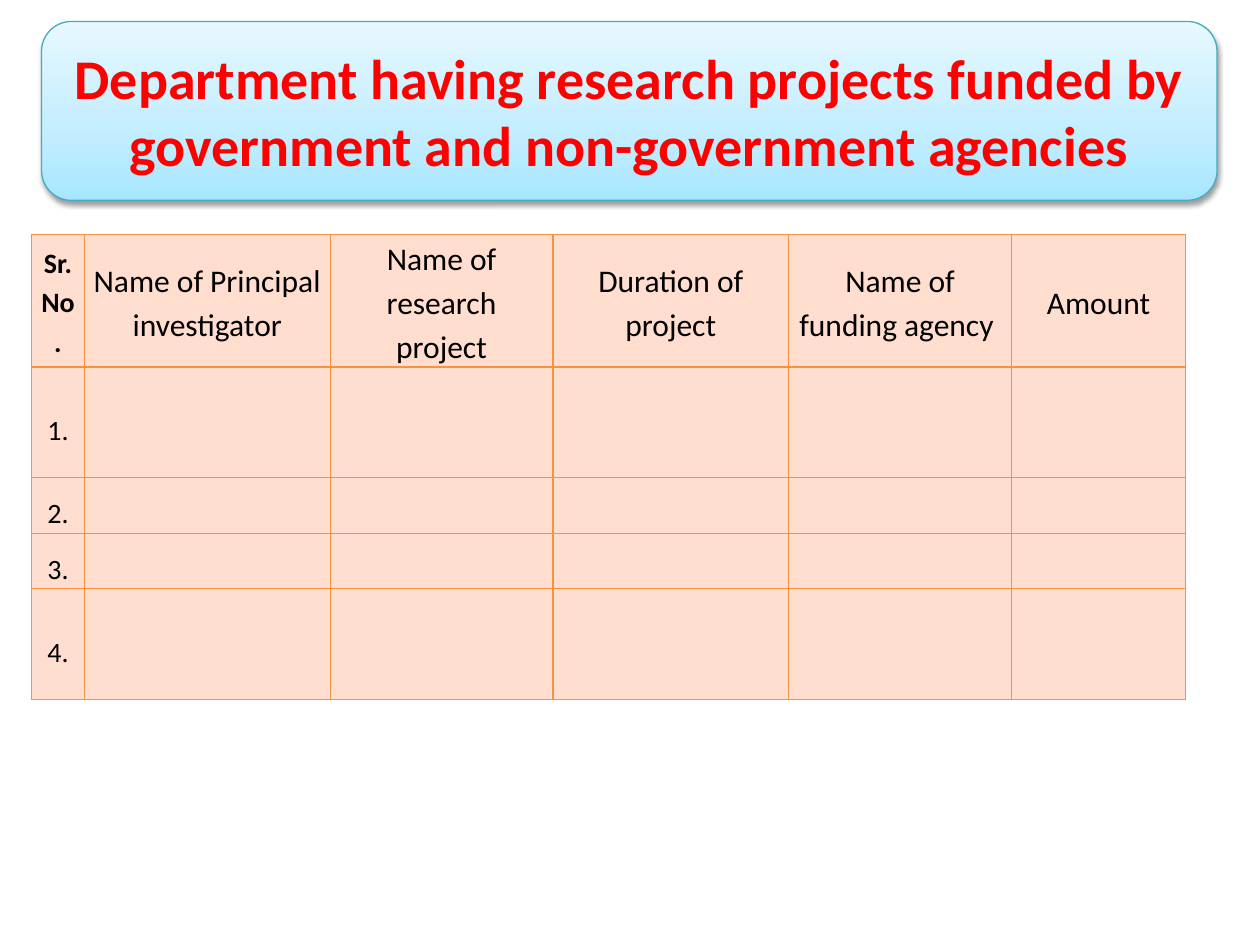
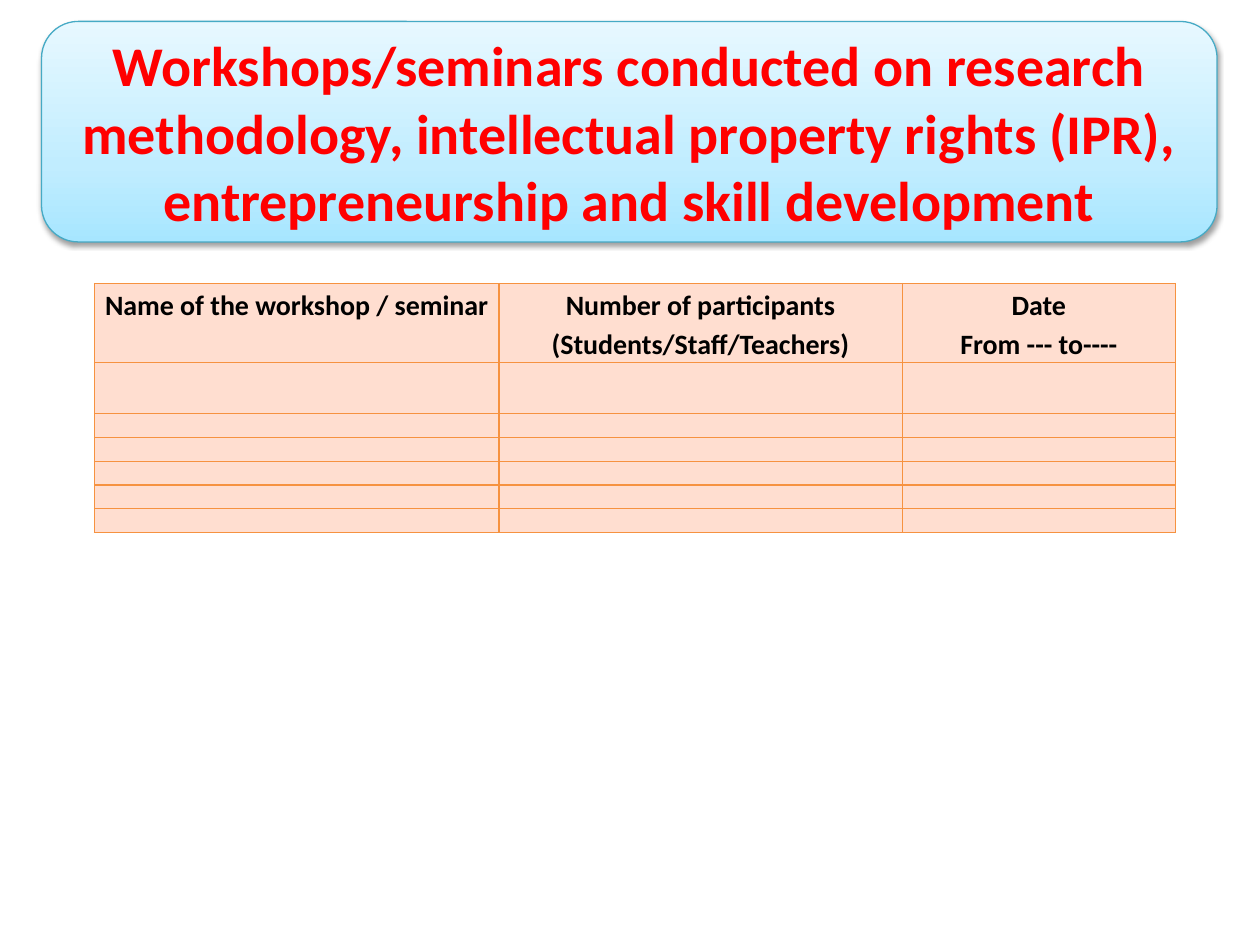
from copy import deepcopy

from lxml import etree
from pptx import Presentation
from pptx.dml.color import RGBColor
from pptx.enum.shapes import MSO_SHAPE
from pptx.enum.text import MSO_ANCHOR, PP_ALIGN
from pptx.oxml.ns import qn
from pptx.util import Inches, Pt

ROUNDED = MSO_SHAPE.ROUNDED_RECTANGLE
CENTER = PP_ALIGN.CENTER
MIDDLE = MSO_ANCHOR.MIDDLE
TOP = MSO_ANCHOR.TOP

RED = RGBColor(0xFF, 0x00, 0x00)
BLACK = RGBColor(0x00, 0x00, 0x00)
TEAL = RGBColor(0x46, 0xAA, 0xC5)
ORANGE = RGBColor(0xF6, 0x92, 0x40)
PEACH = RGBColor(0xFF, 0xDE, 0xD0)
BANNER_STOPS = [
    (0, RGBColor(0xA7, 0xE6, 0xFF)),
    (0.35, RGBColor(0xC1, 0xED, 0xFF)),
    (1, RGBColor(0xE7, 0xF8, 0xFF)),
]
FONT = "Calibri"


def add_banner(slide, title, height):
    banner = slide.shapes.add_shape(
        ROUNDED, Inches(0.33), Inches(0.17), Inches(9.33), Inches(height))
    banner.fill.gradient()
    banner.fill.gradient_angle = 90
    stop_list = banner._element.spPr.find(".//" + qn("a:gsLst"))
    stop_list.append(deepcopy(stop_list[0]))
    for stop, (position, color) in zip(banner.fill.gradient_stops, BANNER_STOPS):
        stop.position = position
        stop.color.rgb = color
    banner.line.color.rgb = TEAL
    banner.line.width = Pt(0.75)

    banner.shadow.inherit = False
    effects = banner._element.spPr.find(qn("a:effectLst"))
    shadow = etree.SubElement(
        effects, qn("a:outerShdw"), blurRad=str(Pt(3.1)), dist=str(Pt(1.6)),
        dir="5400000", rotWithShape="0")
    shade = etree.SubElement(shadow, qn("a:srgbClr"), val=str(BLACK))
    etree.SubElement(shade, qn("a:alpha"), val="38000")

    frame = banner.text_frame
    frame.word_wrap = True
    frame.vertical_anchor = MIDDLE
    frame.text = title
    frame.paragraphs[0].alignment = CENTER
    font = frame.paragraphs[0].runs[0].font
    font.name, font.size, font.bold = FONT, Pt(32), True
    font.color.rgb = RED


def style_cell(cell, text, size, bold, spacing):
    cell.margin_left = cell.margin_right = Inches(0.07)
    cell.margin_top = cell.margin_bottom = 0
    cell.vertical_anchor = MIDDLE
    properties = cell._tc.get_or_add_tcPr()
    for side in ("lnL", "lnR", "lnT", "lnB"):
        border = etree.SubElement(properties, qn("a:" + side), w=str(Pt(0.75)))
        paint = etree.SubElement(border, qn("a:solidFill"))
        etree.SubElement(paint, qn("a:srgbClr"), val=str(ORANGE))
    cell.fill.solid()
    cell.fill.fore_color.rgb = PEACH
    cell.text_frame.text = text
    for paragraph in cell.text_frame.paragraphs:
        paragraph.alignment = CENTER
        paragraph.line_spacing = spacing
        for run in paragraph.runs:
            run.font.name, run.font.size, run.font.bold = FONT, Pt(size), bold
            run.font.color.rgb = BLACK
        if not text:
            etree.SubElement(paragraph._p, qn("a:endParaRPr"), sz="800")


prs = Presentation()
prs.slide_width = Inches(10)
prs.slide_height = Inches(7.5)
blank = prs.slide_layouts[6]

pages = [
    {
        "title": "Department having research projects funded by "
                 "government and non-government agencies",
        "banner_height": 1.42,
        "left": 0.25,
        "top": 1.86,
        "columns": [0.42, 1.95, 1.77, 1.87, 1.77, 1.38],
        "rows": [1.05, 0.88, 0.44, 0.44, 0.88],
        "headings": [
            ("Sr. No.", 16, True),
            ("Name of Principal investigator", 18, False),
            ("Name of research project", 18, False),
            ("Duration of project", 18, False),
            ("Name of funding agency ", 18, False),
            ("Amount", 18, False),
        ],
        "numbered": True,
    },
    {
        "title": "Workshops/seminars conducted on research methodology, "
                 "intellectual property rights (IPR), "
                 "entrepreneurship and skill development",
        "banner_height": 1.75,
        "left": 0.75,
        "top": 2.25,
        "columns": [3.21, 3.2, 2.17],
        "rows": [0.63, 0.4] + [0.19] * 5,
        "headings": [
            ("Name of the workshop / seminar", 16, True),
            ("Number of participants (Students/Staff/Teachers)", 16, True),
            ("Date\nFrom --- to----", 16, True),
        ],
        "numbered": False,
    },
]

for page in pages:
    slide = prs.slides.add_slide(blank)
    add_banner(slide, page["title"], page["banner_height"])
    widths, heights = page["columns"], page["rows"]
    records = slide.shapes.add_table(
        len(heights), len(widths), Inches(page["left"]), Inches(page["top"]),
        Inches(sum(widths)), Inches(sum(heights))).table
    for column, width in zip(records.columns, widths):
        column.width = Inches(width)
    for row, height in zip(records.rows, heights):
        row.height = Inches(height)

    for index, (heading, size, bold) in enumerate(page["headings"]):
        style_cell(records.cell(0, index), heading, size, bold, 1.15)
        for number in range(1, len(heights)):
            entry = f"{number}." if page["numbered"] and index == 0 else ""
            style_cell(records.cell(number, index), entry, 16, False,
                       1.5 if entry else 1)
    if not page["numbered"]:
        records.cell(0, 0).vertical_anchor = TOP

prs.save("out.pptx")
